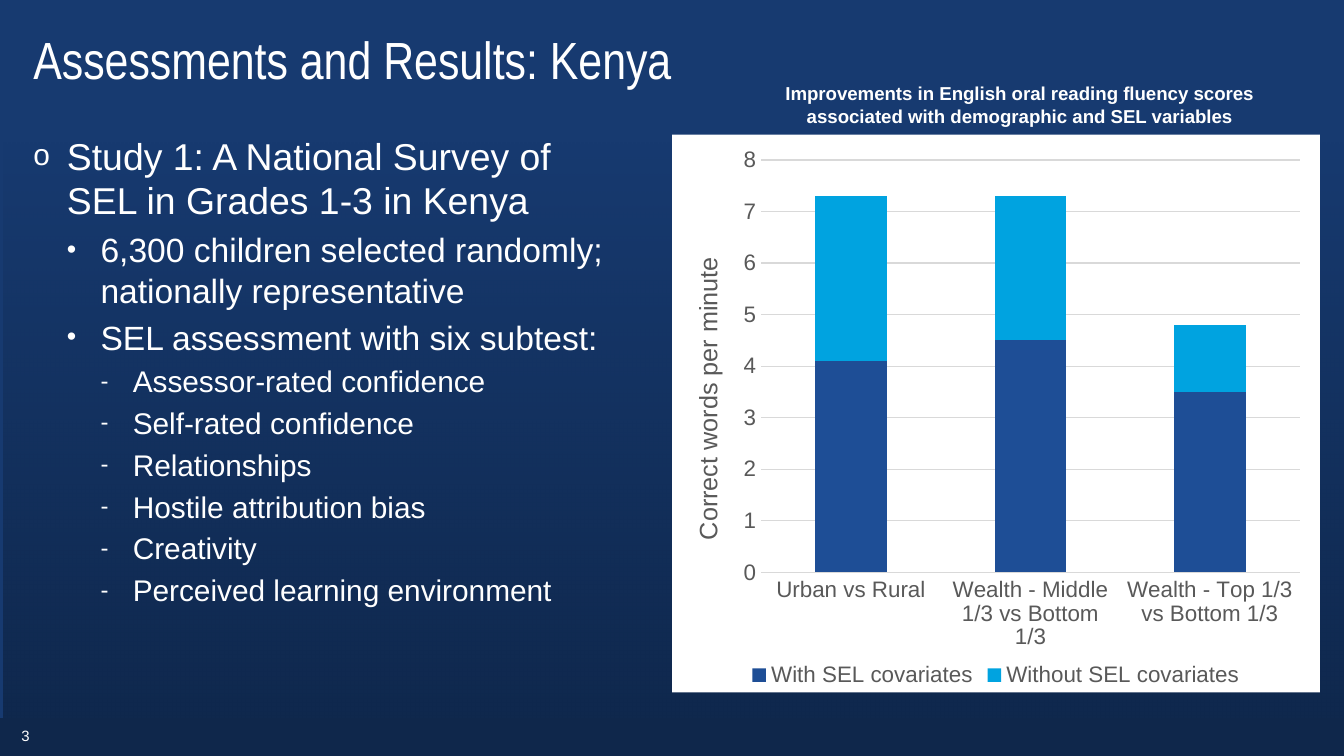
from lxml.etree import SubElement
from pptx import Presentation
from pptx.chart.data import CategoryChartData
from pptx.dml.color import RGBColor
from pptx.enum.chart import XL_CHART_TYPE, XL_LEGEND_POSITION, XL_TICK_MARK
from pptx.enum.shapes import MSO_SHAPE
from pptx.enum.text import MSO_ANCHOR, PP_ALIGN
from pptx.oxml import parse_xml
from pptx.oxml.ns import nsdecls, qn
from pptx.util import Inches, Pt

WHITE = RGBColor(0xFF, 0xFF, 0xFF)
BLUE = RGBColor(0x17, 0x3A, 0x70)
NAVY = RGBColor(0x0F, 0x27, 0x4B)
GRAY = RGBColor(0x59, 0x59, 0x59)
RULE = RGBColor(0xD9, 0xD9, 0xD9)
SERIES = [RGBColor(0x1E, 0x4E, 0x96), RGBColor(0x00, 0xA3, 0xE0)]

prs = Presentation()
prs.slide_width, prs.slide_height = Inches(10), Inches(10 * 9 / 16)
s = prs.slides.add_slide(prs.slide_layouts[6])
s.background.fill.solid()
s.background.fill.fore_color.rgb = BLUE


def grid(x, y, w, h):
    col, row = prs.slide_width / 100, prs.slide_height / 100
    return int(x * col), int(y * row), int(w * col), int(h * row)


def add_text(box, text, size, font="Arial", align=PP_ALIGN.LEFT, bold=False):
    tf = s.shapes.add_textbox(*grid(*box)).text_frame
    tf.word_wrap = True
    p = tf.paragraphs[0]
    p.alignment = align
    r = p.add_run()
    r.text = text
    r.font.size, r.font.name, r.font.bold = Pt(size), font, bold
    r.font.color.rgb = WHITE
    return tf


shade = s.shapes.add_shape(MSO_SHAPE.RECTANGLE, *grid(0.3, 18.7, 100, 81.6))
shade.fill.gradient()
shade.fill.gradient_angle = 270
for stop, position in zip(shade.fill.gradient_stops, (0, 1)):
    stop.color.rgb = NAVY
    stop.position = position
clear = next(shade._element.spPr.iter(qn("a:srgbClr")))
SubElement(clear, qn("a:alpha"), val="0")
footer = s.shapes.add_shape(MSO_SHAPE.RECTANGLE, *grid(0, 95, 100, 5.1))
footer.fill.solid()
footer.fill.fore_color.rgb = NAVY
for sp in (shade, footer):
    sp.line.fill.background()
    sp.shadow.inherit = False

tf = add_text((1.5, 2.7, 96.7, 11.2), "Assessments and Results: Kenya", 28, "Arial Narrow")
tf.vertical_anchor = MSO_ANCHOR.MIDDLE
tf.margin_left = tf.margin_top = tf.margin_bottom = Inches(0.1)
tf.margin_right = Inches(0.2)
tf.paragraphs[0].line_spacing = 0.9

tf = add_text((0, 95.2, 3.8, 4.3), "3", 8, align=PP_ALIGN.CENTER)
tf.vertical_anchor = MSO_ANCHOR.MIDDLE

LEVELS = [("o", 20, 0.25, 0.25), ("•", 18, 0.5, 0.25), ("-", 16, 0.74, 0.24)]
POINTS = [
    (0, "Study 1: A National Survey of SEL in Grades 1-3 in Kenya"),
    (1, "6,300 children selected randomly; nationally representative"),
    (1, "SEL assessment with six subtest:"),
    (2, "Assessor-rated confidence"),
    (2, "Self-rated confidence"),
    (2, "Relationships"),
    (2, "Hostile attribution bias"),
    (2, "Creativity"),
    (2, "Perceived learning environment"),
]
tf = s.shapes.add_textbox(*grid(1.5, 16.7, 46, 73.8)).text_frame
tf.word_wrap = True
for i, (level, text) in enumerate(POINTS):
    bullet, size, left, hang = LEVELS[level]
    p = tf.add_paragraph() if i else tf.paragraphs[0]
    p.level = level
    pPr = p._p.get_or_add_pPr()
    pPr.set("marL", str(Inches(left)))
    pPr.set("indent", str(-Inches(hang)))
    if i:
        p.space_before = Pt(size * 0.2)
    SubElement(pPr, qn("a:buSzPct"), val="80000")
    SubElement(pPr, qn("a:buFont"), typeface="Arial")
    SubElement(pPr, qn("a:buChar"), char=bullet)
    r = p.add_run()
    r.text = text
    r.font.size, r.font.name = Pt(size), "Arial"
    r.font.color.rgb = WHITE

data = CategoryChartData()
data.categories = ["Urban vs Rural", "Wealth - Middle 1/3 vs Bottom 1/3", "Wealth - Top 1/3 vs Bottom 1/3"]
data.add_series("With SEL covariates", (4.1, 4.5, 3.5))
data.add_series("Without SEL covariates", (3.2, 2.8, 1.3))
chart = s.shapes.add_chart(XL_CHART_TYPE.COLUMN_STACKED, *grid(50, 17.8, 48.2, 73.8), data).chart
chart.has_title = False
chart.font.size, chart.font.name = Pt(12), "Arial"
chart.font.color.rgb = GRAY
chart.has_legend = True
chart.legend.position = XL_LEGEND_POSITION.BOTTOM
chart.legend.include_in_layout = False

plot = chart.plots[0]
plot.gap_width, plot.overlap = 150, 100
plot.vary_by_categories = False
for series, color in zip(plot.series, SERIES):
    series.format.fill.solid()
    series.format.fill.fore_color.rgb = color

cat, val = chart.category_axis, chart.value_axis
for item in (cat.tick_labels, val.tick_labels, chart.legend):
    item.font.size, item.font.name = Pt(12), "Arial"
    item.font.color.rgb = GRAY
for axis in (cat, val):
    axis.major_tick_mark = axis.minor_tick_mark = XL_TICK_MARK.NONE
val.minimum_scale, val.maximum_scale, val.major_unit = 0, 8, 1
val.format.line.fill.background()
for line in (cat.format.line, val.major_gridlines.format.line):
    line.color.rgb = RULE
    line.width = Pt(0.75)
r = val.axis_title.text_frame.paragraphs[0].add_run()
r.text = "Correct words per minute"
r.font.size, r.font.name, r.font.bold = Pt(13.5), "Arial", False
r.font.color.rgb = GRAY

plot_area = chart._chartSpace.chart.plotArea
for layout in plot_area.findall(qn("c:layout")):
    plot_area.remove(layout)
layout = SubElement(plot_area, qn("c:layout"))
plot_area.insert(0, layout)
manual = SubElement(layout, qn("c:manualLayout"))
for tag, value in [("layoutTarget", "inner"), ("xMode", "edge"), ("yMode", "edge"),
                   ("x", 0.138), ("y", 0.046), ("w", 0.831), ("h", 0.739)]:
    SubElement(manual, qn(f"c:{tag}"), val=str(value))
chart._chartSpace.chart.addnext(parse_xml(
    f'<c:spPr {nsdecls("c", "a")}><a:solidFill><a:srgbClr val="{WHITE}"/></a:solidFill>'
    '<a:ln><a:noFill/></a:ln></c:spPr>'))

add_text((53.7, 10, 44.3, 13.2),
         "Improvements in English oral reading fluency scores associated with demographic and SEL variables",
         10, align=PP_ALIGN.CENTER, bold=True)

prs.save("out.pptx")
